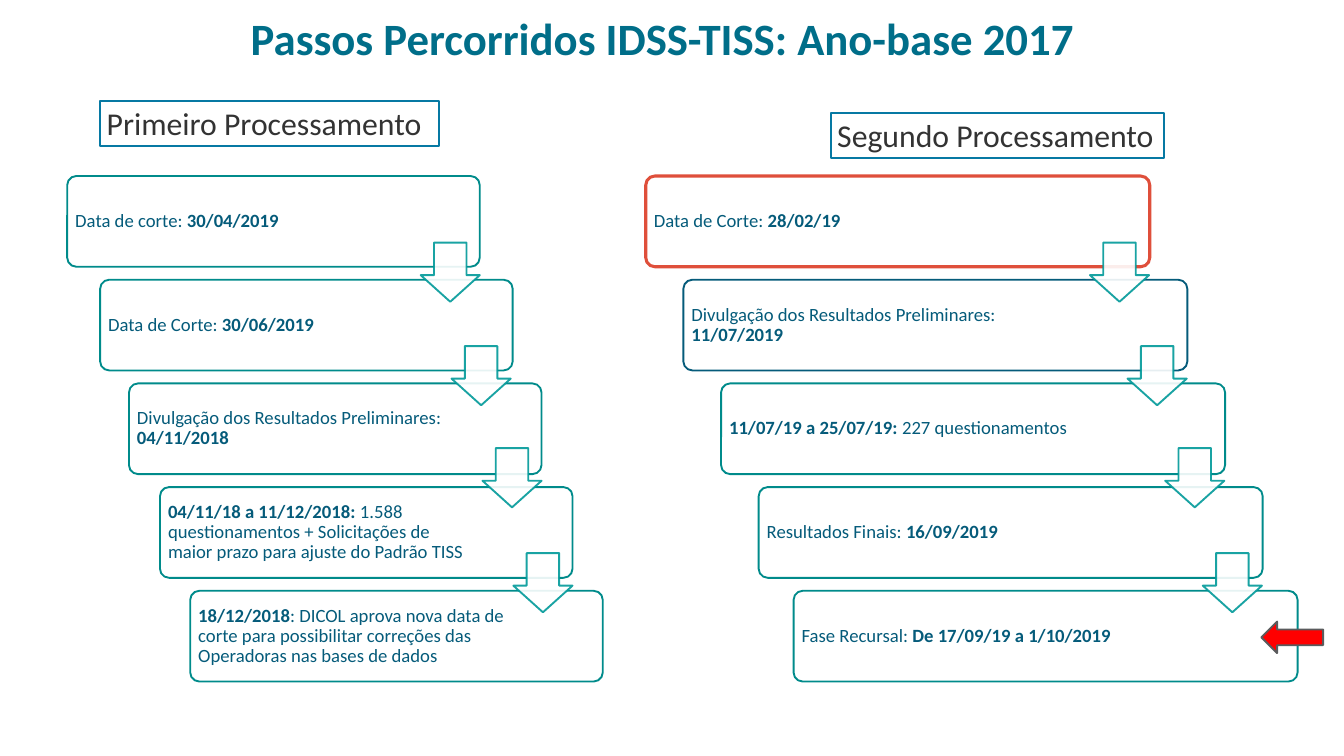
from lxml.etree import SubElement
from pptx import Presentation
from pptx.dml.color import RGBColor
from pptx.enum.shapes import MSO_SHAPE as Shape
from pptx.enum.text import MSO_ANCHOR as Anchor, MSO_AUTO_SIZE as AutoSize, PP_ALIGN as Align
from pptx.oxml.ns import qn
from pptx.util import Pt

FONT = "Calibri"
COLORS = {
    "title": "006E89", "text": "055B7A", "label": "333333", "white": "FFFFFF",
    "teal": "008B8B", "navy": "055B7A", "coral": "DF4F3B", "arrow": "009999",
    "label_line": "0679A3", "red": "FF0000", "gray": "5A5B5D",
}
CARD_TOP, CARD_STEP, CARD_HEIGHT = 188.6, 111.1, 97.2
ARROW_TOPS = [259.9, 370.8, 480.2, 592.6]
ARROW_SIZE = 63.4

# Each step: left edge, outline colour, runs of (text, bold)
FIRST_STEPS = [
    (72, "teal", [("Data de corte: ", False), ("30/04/2019", True)]),
    (107.3, "teal", [("Data de Corte: ", False), ("30/06/2019", True)]),
    (138.2, "teal", [("Divulgação dos Resultados Preliminares: ", False),
                     ("04/11/2018", True)]),
    (171.4, "teal", [("04/11/18 a 11/12/2018: ", True),
                     ("1.588 questionamentos + Solicitações de maior prazo "
                      "para ajuste do Padrão TISS", False)]),
    (203.8, "teal", [("18/12/2018", True),
                     (": DICOL aprova nova data de corte para possibilitar "
                      "correções das Operadoras nas bases de dados", False)]),
]
SECOND_STEPS = [
    (691.9, "coral", [("Data de Corte: ", False), ("28/02/19", True)]),
    (732.2, "navy", [("Divulgação dos Resultados Preliminares: ", False),
                     ("11/07/2019", True)]),
    (772.6, "teal", [("11/07/19 a 25/07/19: ", True), ("227 questionamentos", False)]),
    (812.9, "teal", [("Resultados Finais: ", False), ("16/09/2019", True)]),
    (850.3, "teal", [("Fase Recursal: ", False), ("De 17/09/19 a 1/10/2019", True)]),
]


def rgb(name):
    return RGBColor.from_string(COLORS[name])


def add_run(paragraph, text, size, color, bold=False):
    run = paragraph.add_run()
    run.text = text
    run.font.name = FONT
    run.font.size = Pt(size)
    run.font.bold = bold
    run.font.color.rgb = rgb(color)


def add_box(shapes, kind, left, top, width, height, fill, line, line_width=2):
    shape = shapes.add_shape(kind, Pt(left), Pt(top), Pt(width), Pt(height))
    shape.shadow.inherit = False
    shape.fill.solid()
    shape.fill.fore_color.rgb = rgb(fill)
    shape.line.color.rgb = rgb(line)
    shape.line.width = Pt(line_width)
    return shape


def set_opacity(shape, percent):
    """Apply the same opacity to the fill and the outline."""
    for color in shape._element.spPr.iter(qn("a:srgbClr")):
        SubElement(color, qn("a:alpha"), val=str(percent * 1000))


def add_title(slide, text):
    title = slide.shapes.title
    title.left, title.top, title.width, title.height = Pt(62), Pt(8), Pt(1296), Pt(135)
    frame = title.text_frame
    frame.vertical_anchor = Anchor.TOP
    paragraph = frame.paragraphs[0]
    paragraph.alignment = Align.CENTER
    add_run(paragraph, text, 48, "title", True)


def add_card(shapes, left, top, width, line, runs, right_inset):
    line_width = 3.25 if line == "coral" else 2
    card = add_box(shapes, Shape.ROUNDED_RECTANGLE, left, top, width, CARD_HEIGHT,
                   "white", line, line_width)
    card.adjustments[0] = 0.1
    frame = card.text_frame
    frame.word_wrap = True
    frame.vertical_anchor = Anchor.MIDDLE
    frame.margin_left = frame.margin_top = frame.margin_bottom = Pt(5.76)
    frame.margin_right = Pt(right_inset)
    paragraph = frame.paragraphs[0]
    paragraph.alignment = Align.LEFT
    paragraph.line_spacing = 0.9
    for text, bold in runs:
        add_run(paragraph, text, 20, "text", bold)


def add_staircase(slide, steps, card_width, right_inset, arrow_left, arrow_step):
    shapes = slide.shapes.add_group_shape().shapes
    for index, (left, line, runs) in enumerate(steps):
        add_card(shapes, left, CARD_TOP + index * CARD_STEP, card_width,
                 line, runs, right_inset)
    for index, top in enumerate(ARROW_TOPS):
        arrow = add_box(shapes, Shape.DOWN_ARROW, arrow_left + index * arrow_step, top,
                        ARROW_SIZE, ARROW_SIZE, "white", "arrow")
        arrow.adjustments[0], arrow.adjustments[1] = 0.55, 0.45
        set_opacity(arrow, 90)


def add_label(slide, text, left, top, width):
    label = add_box(slide.shapes, Shape.RECTANGLE, left, top, width, 48.5,
                    "white", "label_line")
    frame = label.text_frame
    frame.word_wrap = False
    frame.auto_size = AutoSize.SHAPE_TO_FIT_TEXT
    frame.vertical_anchor = Anchor.TOP
    paragraph = frame.paragraphs[0]
    paragraph.alignment = Align.LEFT
    add_run(paragraph, text, 34, "label")


def main():
    presentation = Presentation()
    presentation.slide_width, presentation.slide_height = Pt(1440), Pt(810)
    slide = presentation.slides.add_slide(presentation.slide_layouts[5])

    add_title(slide, "Passos Percorridos IDSS-TISS: Ano-base 2017")

    # Descending steps of each processing round
    add_staircase(slide, FIRST_STEPS, 442, 102.2, 450.7, 33.1)
    add_staircase(slide, SECOND_STEPS, 540, 109.6, 1167.8, 40.3)

    # Column headings
    add_label(slide, "Primeiro Processamento", 107.3, 108, 363)
    add_label(slide, "Segundo Processamento", 890, 121, 357)

    # Marker of the current step
    add_box(slide.shapes, Shape.LEFT_ARROW, 1351.4, 666, 66.2, 33.8, "red", "gray")

    presentation.save("out.pptx")


if __name__ == "__main__":
    main()
